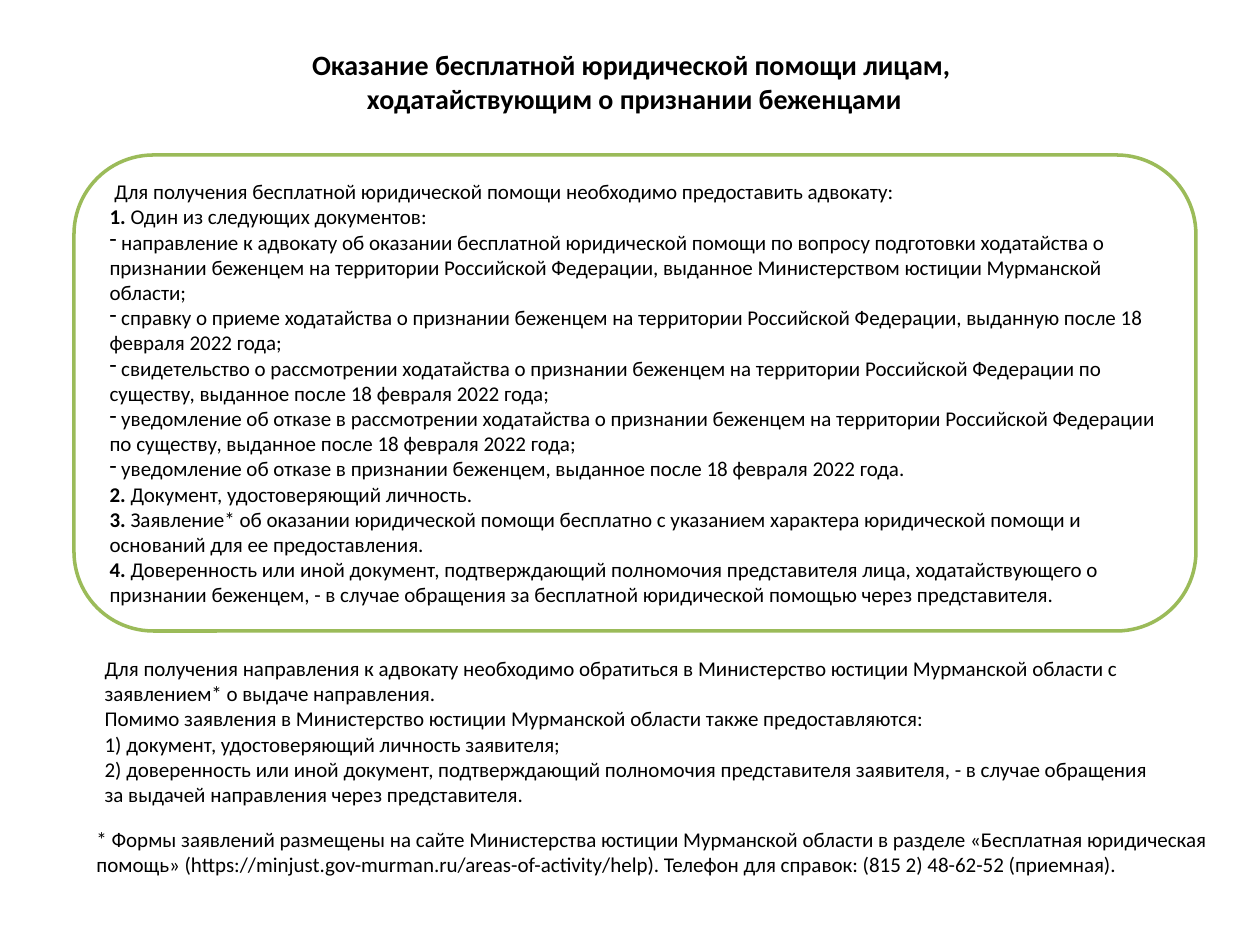
import pptx
import pptx.dml.color
import pptx.enum.shapes
import pptx.enum.text
import pptx.oxml.ns
import pptx.util
from lxml import etree

PX_PER_INCH = 126
BLACK = pptx.dml.color.RGBColor(0x00, 0x00, 0x00)
WHITE = pptx.dml.color.RGBColor(0xFF, 0xFF, 0xFF)
GREEN = pptx.dml.color.RGBColor(0x9B, 0xBB, 0x59)

ALIGN = pptx.enum.text.PP_ALIGN
ANCHOR = pptx.enum.text.MSO_ANCHOR

TITLE = "Оказание бесплатной юридической помощи лицам, \vходатайствующим о признании беженцами"

# Each paragraph is (marker, text); a "-" marker becomes a bullet, any other is bold.
DOCUMENTS = [
    ("", " Для получения бесплатной юридической помощи необходимо предоставить адвокату:"),
    ("1.", " Один из следующих документов:"),
    ("-", " направление к адвокату об оказании бесплатной юридической помощи по вопросу подготовки "
          "ходатайства о признании беженцем на территории Российской Федерации, выданное "
          "Министерством юстиции Мурманской области;"),
    ("-", " справку о приеме ходатайства о признании беженцем на территории Российской Федерации, "
          "выданную после 18 февраля 2022 года;"),
    ("-", " свидетельство о рассмотрении ходатайства о признании беженцем на территории "
          "Российской Федерации по существу, выданное после 18 февраля 2022 года;"),
    ("-", " уведомление об отказе в рассмотрении ходатайства о признании беженцем на территории "
          "Российской Федерации по существу, выданное после 18 февраля 2022 года;"),
    ("-", " уведомление об отказе в признании беженцем, выданное после 18 февраля 2022 года."),
    ("2.", " Документ, удостоверяющий личность."),
    ("3.", " Заявление* об оказании юридической помощи бесплатно с указанием характера "
           "юридической помощи и оснований для ее предоставления."),
    ("4.", " Доверенность или иной документ, подтверждающий полномочия представителя лица, "
           "ходатайствующего о признании беженцем, - в случае обращения за бесплатной "
           "юридической помощью через представителя."),
]

REFERRAL = [
    ("", "Для получения направления к адвокату необходимо обратиться в Министерство юстиции "
         "Мурманской области с заявлением* о выдаче направления."),
    ("", "Помимо заявления в Министерство юстиции Мурманской области также предоставляются:"),
    ("", "1) документ, удостоверяющий личность заявителя;"),
    ("", "2) доверенность или иной документ, подтверждающий полномочия представителя заявителя, "
         "- в случае обращения за выдачей направления через представителя."),
]

FOOTNOTE = (
    "* Формы заявлений размещены на сайте Министерства юстиции Мурманской области в разделе "
    "«Бесплатная юридическая помощь» (https://minjust.gov-murman.ru/areas-of-activity/help). "
    "Телефон для справок: (815 2) 48-62-52 (приемная)."
)


def px(length):
    return pptx.util.Emu(round(length * 914400 / PX_PER_INCH))


def add_span(para, text, size, bold):
    span = para.add_run()
    span.text = text
    values = {"name": "Calibri", "size": pptx.util.Pt(size), "bold": bold}
    for name, value in values.items():
        setattr(span.font, name, value)
    span.font.color.rgb = BLACK


def add_dash_bullet(para):
    properties = para._p.get_or_add_pPr()
    properties.set("marL", "0")
    properties.set("indent", "0")
    bullet = etree.SubElement(properties, pptx.oxml.ns.qn("a:buChar"))
    bullet.set("char", "-")


def write_text(box, paragraphs, size=12, bold=False, align=ALIGN.LEFT, anchor=ANCHOR.TOP):
    frame = box.text_frame
    frame.word_wrap = True
    frame.vertical_anchor = anchor
    for index, (marker, text) in enumerate(paragraphs):
        para = frame.add_paragraph() if index else frame.paragraphs[0]
        para.alignment = align
        if marker == "-":
            add_dash_bullet(para)
        elif marker:
            add_span(para, marker, size, True)
        if "\v" in text:
            first, second = text.split("\v")
            add_span(para, first, size, bold)
            para.add_line_break()
            text = second
        add_span(para, text, size, bold)


def add_text_box(page, bounds, text, **format_values):
    box = page.shapes.add_textbox(*map(px, bounds))
    write_text(box, [("", text)], **format_values)


def add_panel(page, bounds, paragraphs, outline=None, **format_values):
    """Add a rounded panel; without an outline colour it stays see-through."""
    kind = pptx.enum.shapes.MSO_SHAPE.ROUNDED_RECTANGLE
    panel = page.shapes.add_shape(kind, *map(px, bounds))
    panel.shadow.inherit = False
    if outline is None:
        panel.fill.background()
        panel.line.fill.background()
    else:
        panel.fill.solid()
        panel.fill.fore_color.rgb = WHITE
        panel.line.color.rgb = outline
        panel.line.width = pptx.util.Pt(2)
    write_text(panel, paragraphs, **format_values)


def main():
    deck = pptx.Presentation()
    deck.slide_width = px(1260)
    deck.slide_height = px(945)
    page = deck.slides.add_slide(deck.slide_layouts[6])

    add_text_box(page, (84, 37, 1101, 89), TITLE, size=16, bold=True,
                 align=ALIGN.CENTER, anchor=ANCHOR.MIDDLE)
    add_panel(page, (74, 155, 1122, 476), DOCUMENTS, outline=GREEN, anchor=ANCHOR.MIDDLE)
    add_panel(page, (84, 641, 1101, 169), REFERRAL)
    add_text_box(page, (84, 820, 1142, 102), FOOTNOTE)

    deck.save("out.pptx")


if __name__ == "__main__":
    main()
